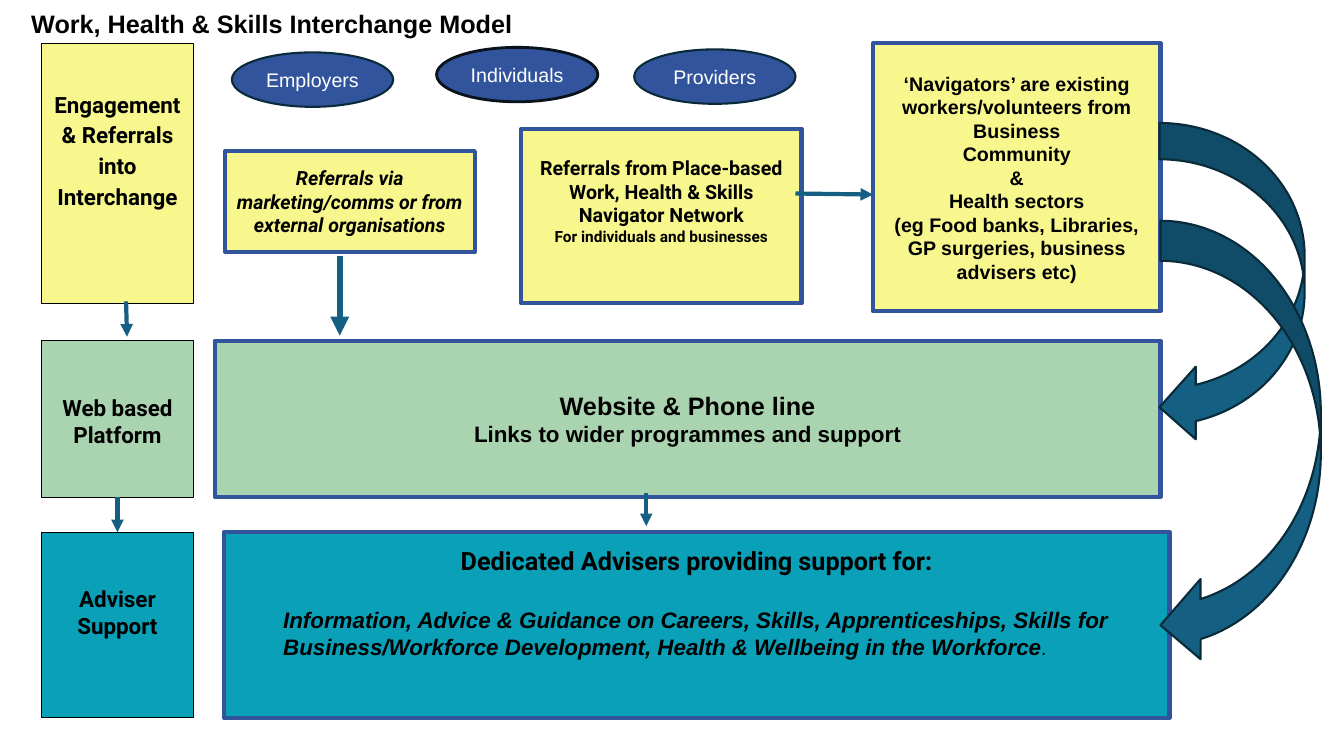
from pptx import Presentation
from pptx.dml.color import RGBColor
from pptx.enum.shapes import MSO_CONNECTOR, MSO_SHAPE
from pptx.enum.text import MSO_ANCHOR, PP_ALIGN
from pptx.oxml.ns import qn
from pptx.util import Inches, Pt
from lxml.etree import SubElement

TITLE = "Work, Health & Skills Interchange Model"
YELLOW, GREEN, TEAL = "F7F78D", "AAD4AF", "0AA0B7"
BLUE, ARROW, NAVY, BLACK, WHITE = "32549C", "156082", "092A39", "000000", "FFFFFF"

# Rows of the model and the edges of its columns, in inches
ENGAGE_TOP, PLATFORM_TOP, ADVISER_TOP = 0.43, 3.38, 5.28
PLATFORM_HEIGHT, ADVISER_HEIGHT = 1.55, 1.84
STAGE_LEFT, STAGE_WIDTH = 0.41, 1.51
MAIN_LEFT, MAIN_RIGHT = 2.13, 11.51
MAIN_WIDTH = MAIN_RIGHT - MAIN_LEFT
NAVIGATOR_LEFT = 8.66

# Stage: label, top, height, fill, top inset, line spacing
STAGES = [
    ("Engagement & Referrals into Interchange", ENGAGE_TOP, 2.58, YELLOW, 0.43, 1.15),
    ("Web based Platform", PLATFORM_TOP, PLATFORM_HEIGHT, GREEN, 0.53, 1),
    ("Adviser Support", ADVISER_TOP, ADVISER_HEIGHT, TEAL, 0.53, 1),
]

# Audience: label, left, top, outline colour, outline width
AUDIENCES = [
    ("Employers", 2.3, 0.52, NAVY, 1.5),
    ("Individuals", 4.33, 0.47, "0A121C", 2),
    ("Providers", 6.29, 0.49, NAVY, 1.5),
]

# Panel: place, fill, top inset (None centres the text), paragraphs of (text, size, font)
PANELS = {
    "marketing": ((2.23, 1.5, 2.48, 1), YELLOW, None, [
        ("Referrals via marketing/comms or from external organisations", 14, "Roboto")]),
    "network": ((5.17, 1.28, 2.78, 1.73), YELLOW, 0.27, [
        ("Referrals from Place-based Work, Health & Skills Navigator Network", 14, "Roboto"),
        ("For individuals and businesses", 11, "Roboto")]),
    "navigators": ((NAVIGATOR_LEFT, ENGAGE_TOP, MAIN_RIGHT - NAVIGATOR_LEFT, 2.66), YELLOW, None, [
        ("‘Navigators’ are existing workers/volunteers from", 14, "Arial"),
        ("Business", 14, "Arial"),
        ("Community", 14, "Arial"),
        ("&", 14, "Arial"),
        ("Health sectors", 14, "Arial"),
        ("(eg Food banks, Libraries, GP surgeries, business advisers etc)", 14, "Arial")]),
    "website": ((MAIN_LEFT, PLATFORM_TOP, MAIN_WIDTH, PLATFORM_HEIGHT), GREEN, None, [
        ("Website & Phone line", 18, "Arial"),
        ("Links to wider programmes and support", 16, "Arial")]),
    "advisers": ((2.22, ADVISER_TOP, MAIN_WIDTH, ADVISER_HEIGHT), TEAL, 0.13, [
        ("Dedicated Advisers providing support for:", 18, "Roboto"),
        ("Information, Advice & Guidance on Careers, Skills, Apprenticeships, Skills for "
         "Business/Workforce Development, Health & Wellbeing in the Workforce", 16, "Arial")]),
}

# Straight arrow: start x, start y, end x, end y, width
ARROWS = [
    (1.25, 2.99, 1.26, 3.34, 3),
    (7.89, 1.92, NAVIGATOR_LEFT, 1.93, 3),
    (3.37, 2.54, 3.37, 3.33, 4.5),
    (6.41, 4.89, 6.41, 5.22, 3),
]
CURVED_ARROWS = [(11.5, 1.22, 1.44, 3.18), (11.51, 2.19, 1.59, 4.41)]


def color(value):
    return RGBColor.from_string(value)


def style_run(span, size, font, ink=BLACK, bold=True, italic=False):
    span.font.size, span.font.name = Pt(size), font
    span.font.bold, span.font.italic = bold, italic
    span.font.color.rgb = color(ink)


def add_outlined(slide, kind, place, fill, line, width):
    shape = slide.shapes.add_shape(kind, *map(Inches, place))
    shape.shadow.inherit = False
    shape.fill.solid()
    shape.fill.fore_color.rgb = color(fill)
    shape.line.color.rgb = color(line)
    shape.line.width = Pt(width)
    return shape


def write(shape, paragraphs, top_inset=None, ink=BLACK, bold=True, italic=False):
    """Fill a shape with centred paragraphs, hung from top_inset when one is given."""
    frame = shape.text_frame
    frame.word_wrap = True
    frame.vertical_anchor = MSO_ANCHOR.MIDDLE
    if top_inset is not None:
        frame.vertical_anchor = MSO_ANCHOR.TOP
        frame.margin_top = Inches(top_inset)
    frame.text = "\n".join(text for text, _, _ in paragraphs)
    for para, (_, size, font) in zip(frame.paragraphs, paragraphs):
        para.alignment = PP_ALIGN.CENTER
        style_run(para.runs[0], size, font, ink, bold, italic)


def add_arrow(slide, x1, y1, x2, y2, width):
    arrow = slide.shapes.add_connector(
        MSO_CONNECTOR.STRAIGHT, *map(Inches, (x1, y1, x2, y2)))
    arrow.line.color.rgb = color(ARROW)
    arrow.line.width = Pt(width)
    SubElement(arrow.line._get_or_add_ln(), qn("a:tailEnd"), type="triangle")
    SubElement(arrow._element.spPr, qn("a:effectLst"))
    return arrow


def add_title(slide):
    title = slide.shapes.title
    title.left, title.top, title.width, title.height = map(Inches, (0.31, 0.05, 5.5, 0.36))
    frame = title.text_frame
    frame.margin_left = frame.margin_right = frame.margin_top = frame.margin_bottom = 0
    frame.vertical_anchor = MSO_ANCHOR.MIDDLE
    frame.text = TITLE
    frame.paragraphs[0].alignment = PP_ALIGN.LEFT
    style_run(frame.paragraphs[0].runs[0], 18, "Arial")


def main():
    deck = Presentation()
    deck.slide_width, deck.slide_height = Inches(13.33), Inches(7.5)
    slide = deck.slides.add_slide(deck.slide_layouts[5])
    add_title(slide)

    stages = []
    for label, top, height, fill, inset, spacing in STAGES:
        box = add_outlined(slide, MSO_SHAPE.RECTANGLE,
                           (STAGE_LEFT, top, STAGE_WIDTH, height), fill, BLACK, 0.5)
        write(box, [(label, 16, "Roboto")], inset)
        box.text_frame.paragraphs[0].line_spacing = spacing
        stages.append(box)

    for label, left, top, line, width in AUDIENCES:
        oval = add_outlined(slide, MSO_SHAPE.OVAL, (left, top, 1.6, 0.54), BLUE, line, width)
        write(oval, [(label, 14, "Arial")], ink=WHITE, bold=False)

    panels = {}
    for name, (place, fill, inset, paragraphs) in PANELS.items():
        panels[name] = add_outlined(slide, MSO_SHAPE.RECTANGLE, place, fill, BLUE, 3)
        write(panels[name], paragraphs, inset, italic=name == "marketing")

    support = panels["advisers"].text_frame.paragraphs[1]
    support.alignment = PP_ALIGN.LEFT
    support.space_before = Pt(22)
    support._p.get_or_add_pPr().set("marL", str(Inches(0.49)))
    support.runs[0].font.italic = True
    full_stop = support.add_run()
    full_stop.text = "."
    style_run(full_stop, 14, "Arial", bold=False, italic=True)

    for ends in ARROWS:
        add_arrow(slide, *ends)
    middle = STAGE_LEFT + STAGE_WIDTH / 2
    handover = add_arrow(slide, middle, PLATFORM_TOP + PLATFORM_HEIGHT, middle, ADVISER_TOP, 3)
    handover.begin_connect(stages[1], 2)
    handover.end_connect(stages[2], 0)

    for place in CURVED_ARROWS:
        add_outlined(slide, MSO_SHAPE.CURVED_LEFT_ARROW, place, ARROW, NAVY, 1.5)

    deck.save("out.pptx")


if __name__ == "__main__":
    main()
